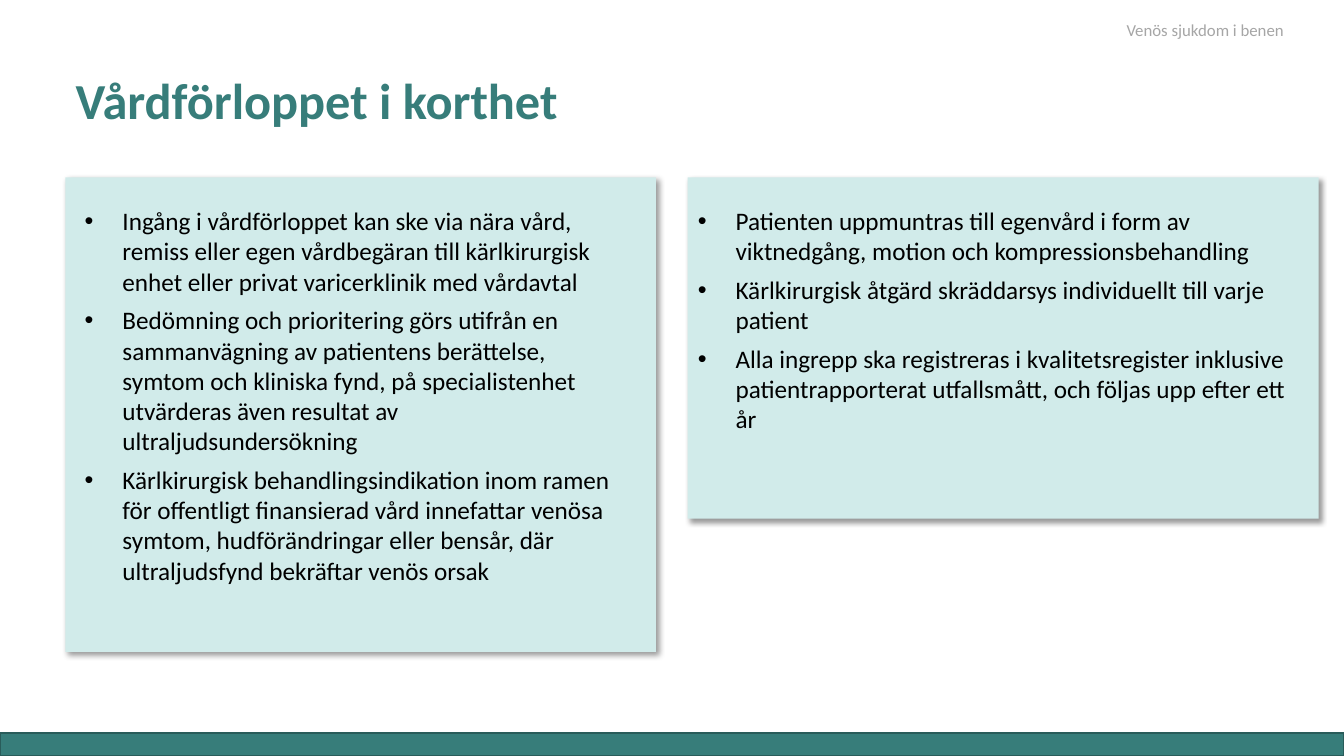
from dataclasses import dataclass

from lxml.etree import SubElement
from pptx import Presentation
from pptx.dml.color import RGBColor as Rgb
from pptx.enum.shapes import MSO_SHAPE as Shape
from pptx.enum.text import MSO_ANCHOR as Anchor, MSO_AUTO_SIZE as AutoSize, PP_ALIGN as Align
from pptx.oxml.ns import qn
from pptx.util import Cm, Pt


@dataclass(frozen=True)
class Theme:
    font: str = "Calibri"
    teal: Rgb = Rgb(0x37, 0x7D, 0x7A)
    dark_teal: Rgb = Rgb(0x29, 0x5C, 0x5A)
    pale_teal: Rgb = Rgb(0xD1, 0xEB, 0xEA)
    black: Rgb = Rgb(0, 0, 0)
    grey: Rgb = Rgb(0xA6, 0xA6, 0xA6)
    title: int = 36
    body: int = 18
    topic: int = 12


THEME = Theme()
SLIDE_WIDTH, SLIDE_HEIGHT = 33.87, 19.05

ENTRY_POINTS = [
    "Ingång i vårdförloppet kan ske via nära vård, remiss eller egen vårdbegäran "
    "till kärlkirurgisk enhet eller privat varicerklinik med vårdavtal",
    "Bedömning och prioritering görs utifrån en sammanvägning av patientens berättelse, "
    "symtom och kliniska fynd, på specialistenhet utvärderas även resultat av "
    "ultraljudsundersökning",
    "Kärlkirurgisk behandlingsindikation inom ramen för offentligt finansierad vård "
    "innefattar venösa symtom, hudförändringar eller bensår, där ultraljudsfynd "
    "bekräftar venös orsak",
]
TREATMENT_POINTS = [
    "Patienten uppmuntras till egenvård i form av viktnedgång, motion och "
    "kompressionsbehandling",
    "Kärlkirurgisk åtgärd skräddarsys individuellt till varje patient",
    "Alla ingrepp ska registreras i kvalitetsregister inklusive patientrapporterat "
    "utfallsmått, och följas upp efter ett år",
]


def style(paragraph, size, color, bold=False):
    font = paragraph.font
    font.name, font.size, font.bold = THEME.font, Pt(size), bold
    font.color.rgb = color


def place(shape, left, top, width, height):
    shape.left, shape.top = Cm(left), Cm(top)
    shape.width, shape.height = Cm(width), Cm(height)


def add_rectangle(slide, box, fill):
    rectangle = slide.shapes.add_shape(Shape.RECTANGLE, *map(Cm, box))
    rectangle.shadow.inherit = False
    rectangle.fill.solid()
    rectangle.fill.fore_color.rgb = fill
    return rectangle


def add_topic(slide, box, text):
    frame = slide.shapes.add_textbox(*map(Cm, box)).text_frame
    frame.word_wrap = False
    frame.text = text
    style(frame.paragraphs[0], THEME.topic, THEME.grey)


def add_title(title, box, text):
    place(title, *box)
    frame = title.text_frame
    frame.text = text
    frame.auto_size, frame.vertical_anchor = AutoSize.NONE, Anchor.BOTTOM
    heading = frame.paragraphs[0]
    heading.alignment, heading.line_spacing = Align.LEFT, 0.9
    style(heading, THEME.title, THEME.teal, bold=True)


def add_card(slide, body, box, points, inset, text_width, text_height):
    """A shadowed card with a bulleted list on top of it."""
    left, top, _, _ = box
    card = add_rectangle(slide, box, THEME.pale_teal)
    card.line.fill.background()
    effects = card.element.spPr.find(qn("a:effectLst"))
    shadow = SubElement(effects, qn("a:outerShdw"), blurRad=str(Pt(4)), dist=str(Pt(3)),
                        dir="2700000", algn="tl", rotWithShape="0")
    shade = SubElement(shadow, qn("a:srgbClr"), val=str(THEME.black))
    SubElement(shade, qn("a:alpha"), val="40000")

    # Bring the list in front of its card
    slide.shapes.element.append(body.element)
    place(body, left + inset, top + 0.58, text_width, text_height)
    frame = body.text_frame
    frame.text = "\n".join(points)
    frame.auto_size = AutoSize.NONE
    for number, paragraph in enumerate(frame.paragraphs):
        paragraph.space_before = Pt(6 if number else 0)
        style(paragraph, THEME.body, THEME.black)


def add_footer_bar(slide, height):
    bar = add_rectangle(slide, (0, SLIDE_HEIGHT - height, SLIDE_WIDTH, height), THEME.teal)
    bar.line.color.rgb, bar.line.width = THEME.dark_teal, Pt(1)


def build_summary_slide(deck):
    slide = deck.slides.add_slide(deck.slide_layouts.get_by_name("Two Content"))
    title, entry, treatment = slide.placeholders

    # Footer
    add_footer_bar(slide, 0.58)

    # Heading and topic
    add_title(title, (1.65, 1.72, 25.4, 1.7), "Vårdförloppet i korthet")
    add_topic(slide, (28.14, 0.38, 4.78, 0.76), "Venös sjukdom i benen")

    # Cards
    add_card(slide, entry, (1.65, 4.47, 14.88, 11.96), ENTRY_POINTS, 0.23, 14.2, 7.77)
    add_card(slide, treatment, (17.33, 4.47, 15.9, 8.6), TREATMENT_POINTS, 0, 15.9, 6.83)


def main():
    deck = Presentation()
    deck.slide_width, deck.slide_height = Cm(SLIDE_WIDTH), Cm(SLIDE_HEIGHT)
    build_summary_slide(deck)
    deck.save("out.pptx")


if __name__ == "__main__":
    main()
